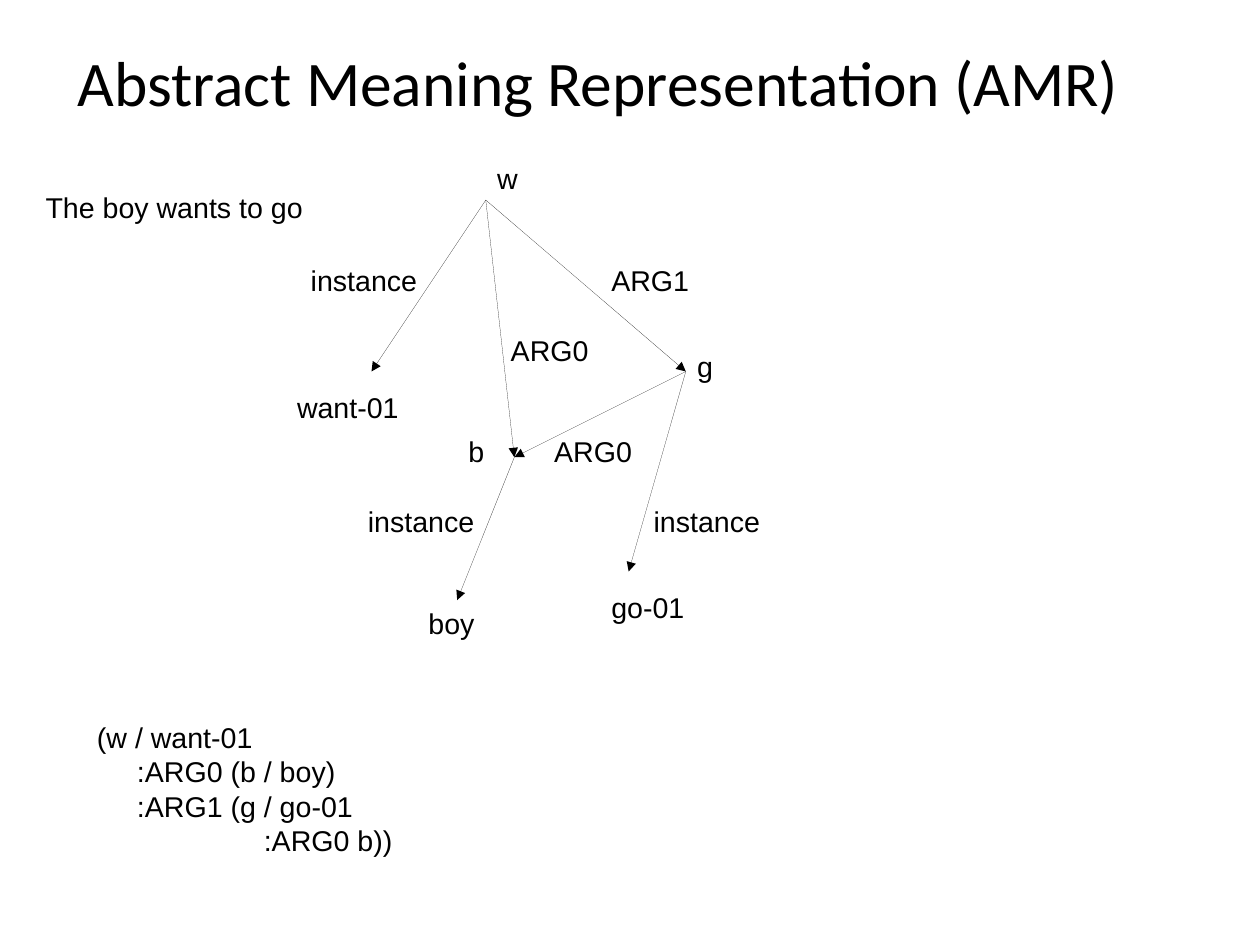
"""Build a slide showing the AMR graph of one sentence."""
from dataclasses import dataclass

from lxml.etree import SubElement
from pptx import Presentation
from pptx.dml.color import RGBColor
from pptx.enum.shapes import MSO_CONNECTOR
from pptx.enum.text import MSO_ANCHOR, MSO_AUTO_SIZE, PP_ALIGN
from pptx.oxml.ns import qn
from pptx.slide import Slide
from pptx.text.text import TextFrame
from pptx.util import Inches, Pt

COLORS = {"ink": "000000", "paper": "FFFFFF"}


@dataclass(frozen=True)
class Label:
    """A piece of text and its box in inches."""
    text: str
    left: float
    top: float
    width: float
    height: float = 0.39
    indents: tuple[float, ...] = ()


POINTS = {
    "w": (4.25, 1.75), "g": (6, 3.25), "b": (4.5, 4),
    "want-01": (3.25, 3.25), "boy": (4, 5.25), "go-01": (5.5, 5),
}
EDGES = [("w", "want-01"), ("w", "g"), ("w", "b"),
         ("g", "b"), ("b", "boy"), ("g", "go-01")]
LABELS = [
    Label("ARG1", 5.25, 2.25, 0.88),
    Label("ARG0", 4.37, 2.86, 0.88),
    Label("ARG0", 4.75, 3.75, 0.88),
    Label("instance", 2.62, 2.25, 1.13),
    Label("instance", 5.62, 4.36, 1.13),
    Label("instance", 3.12, 4.36, 1.13),
    Label("want-01", 2.5, 3.36, 1.09),
    Label("boy", 3.65, 5.25, 0.6, 0.5),
    Label("go-01", 5.25, 5.11, 0.84),
    Label("w", 4.25, 1.36, 0.38),
    Label("g", 6, 3, 0.59, 0.85),
    Label("b", 4, 3.75, 0.59, 0.64),
    Label("The boy wants to go", 0.3, 1.61, 2.45),
    Label("(w / want-01\n:ARG0 (b / boy)\n:ARG1 (g / go-01\n:ARG0 b))",
          0.75, 6.25, 2.78, 1.25, (0, 0.35, 0.35, 1.46)),
]


def write(frame: TextFrame, text: str, *, size: float = 18,
          font: str = "Arial", color: str = "ink",
          align: PP_ALIGN = PP_ALIGN.LEFT, wrap: bool = False,
          indents: tuple[float, ...] = ()) -> None:
    """Fill a frame with formatted text, one paragraph per line."""
    frame.text = text
    frame.word_wrap = wrap
    frame.auto_size = MSO_AUTO_SIZE.NONE
    frame.vertical_anchor = MSO_ANCHOR.TOP
    for par in frame.paragraphs:
        par.alignment = align
        for run in par.runs:
            run.font.size = Pt(size)
            run.font.name = font
            run.font.color.rgb = RGBColor.from_string(COLORS[color])
    for par, indent in zip(frame.paragraphs, indents):
        par._p.get_or_add_pPr().set("marL", str(Inches(indent)))


def arrow(slide: Slide, start: str, end: str) -> None:
    """Draw a hairline arrow between two named points of the graph."""
    ends = [Inches(v) for v in POINTS[start] + POINTS[end]]
    edge = slide.shapes.add_connector(MSO_CONNECTOR.STRAIGHT, *ends)
    edge.line.color.rgb = RGBColor.from_string(COLORS["ink"])
    SubElement(edge.line._get_or_add_ln(), qn("a:tailEnd"), type="triangle")
    SubElement(edge._element.spPr, qn("a:effectLst"))
    edge._element.remove(edge._element.find(qn("p:style")))


def label(slide: Slide, item: Label) -> None:
    """Place one label in a text box."""
    box = slide.shapes.add_textbox(Inches(item.left), Inches(item.top),
                                   Inches(item.width), Inches(item.height))
    write(box.text_frame, item.text, indents=item.indents)


def main() -> None:
    """Build and save the slide."""
    deck = Presentation()
    deck.slide_width = Inches(28 / 2.54)
    deck.slide_height = Inches(21 / 2.54)
    slide = deck.slides.add_slide(deck.slide_layouts[5])
    fill = slide.background.fill
    fill.solid()
    fill.fore_color.rgb = RGBColor.from_string(COLORS["paper"])
    title = slide.shapes.title
    title.left, title.top = Inches(0), Inches(0.33)
    title.width, title.height = Inches(10.47), Inches(1.48)
    write(title.text_frame, "Abstract Meaning Representation (AMR)",
          size=40, font="Calibri", align=PP_ALIGN.CENTER, wrap=True)
    for start, end in EDGES:
        arrow(slide, start, end)
    for item in LABELS:
        label(slide, item)
    deck.save("out.pptx")


if __name__ == "__main__":
    main()
